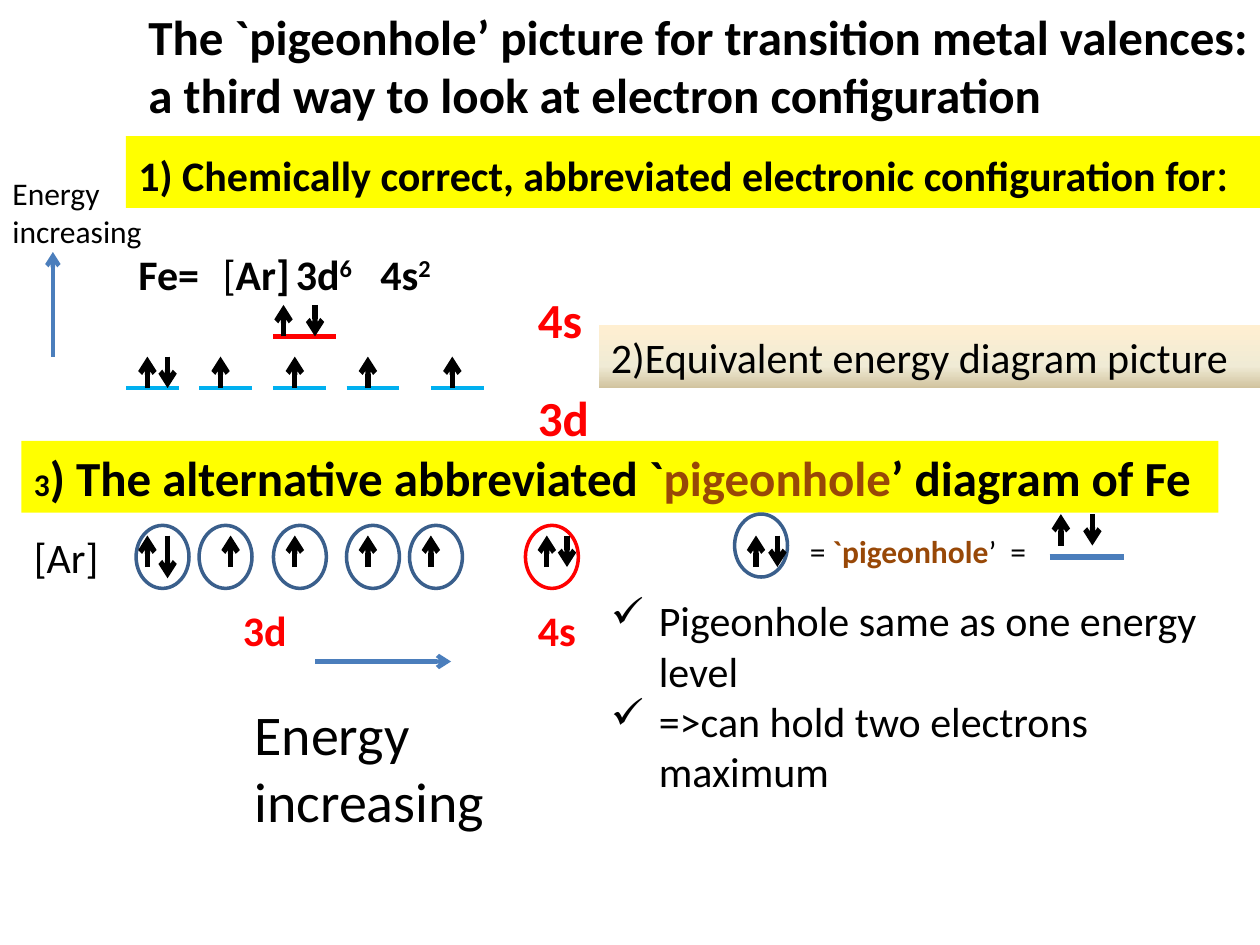
from dataclasses import dataclass

from copy import deepcopy
from lxml.etree import SubElement
from pptx import Presentation
from pptx.dml.color import RGBColor
from pptx.enum.shapes import MSO_CONNECTOR, MSO_SHAPE
from pptx.enum.text import MSO_ANCHOR, MSO_AUTO_SIZE, PP_ALIGN
from pptx.oxml.ns import qn
from pptx.util import Inches, Pt


@dataclass(frozen=True)
class Theme:
    font: str = "Calibri"
    black: str = "000000"
    red: str = "FF0000"
    brown: str = "984807"
    yellow: str = "FFFF00"
    cyan: str = "00B0F0"
    blue: str = "4B7EBC"
    outline: str = "3A5F8C"
    sand: tuple = ((0, "FFEFD1"), (0.65, "F0EBD5"), (1, "D1C39F"))
    small: int = 18
    body: int = 24
    heading: int = 28
    large: int = 32


@dataclass(frozen=True)
class Box:
    left: float
    top: float
    width: float
    height: float

    def inner(self, left, top, width, height):
        return Box(self.left + left, self.top + top, width, height)

    def lengths(self):
        return [Inches(n) for n in (self.left, self.top, self.width, self.height)]


THEME = Theme()


def add_span(para, text, size=THEME.body, color=THEME.black, bold=False, baseline=None):
    span = para.add_run()
    span.text = text
    span.font.name = THEME.font
    span.font.size = Pt(size)
    span.font.bold = bold
    span.font.color.rgb = RGBColor.from_string(color)
    if baseline:
        span._r.get_or_add_rPr().set("baseline", str(baseline))


def prepare_frame(shape):
    frame = shape.text_frame
    frame.word_wrap = True
    frame.auto_size = MSO_AUTO_SIZE.SHAPE_TO_FIT_TEXT
    frame.vertical_anchor = MSO_ANCHOR.TOP
    frame.paragraphs[0].alignment = PP_ALIGN.LEFT
    return frame


def add_label(page, box, text, **style):
    frame = prepare_frame(page.shapes.add_textbox(*box.lengths()))
    add_span(frame.paragraphs[0], text, **style)
    return frame


def add_band(page, box):
    band = page.shapes.add_shape(MSO_SHAPE.RECTANGLE, *box.lengths())
    band.shadow.inherit = False
    band.line.fill.background()
    band.fill.solid()
    band.fill.fore_color.rgb = RGBColor.from_string(THEME.yellow)
    return band, prepare_frame(band).paragraphs[0]


def add_line(page, start, end, color, width=2.5, arrow=False):
    line = page.shapes.add_connector(
        MSO_CONNECTOR.STRAIGHT, *[Inches(n) for n in (*start, *end)])
    line.line.color.rgb = RGBColor.from_string(color)
    line.line.width = Pt(width)
    properties = line._element.spPr
    if arrow:
        SubElement(properties.find(qn("a:ln")), qn("a:tailEnd"), type="arrow")
    SubElement(properties, qn("a:effectLst"))


def add_electron(page, left, top, down=False, length=0.25):
    ends = [(left, top + length), (left, top)]
    if down:
        ends.reverse()
    add_line(page, *ends, THEME.black, 3, arrow=True)


def add_level(page, box, color, up, down=None, width=2.5, gap=0):
    bottom = box.top + box.height
    add_line(page, (box.left, bottom), (box.left + box.width, bottom), color, width)
    add_electron(page, box.left + up, bottom - gap - 0.25)
    if down:
        add_electron(page, box.left + down, bottom - gap - 0.25, down=True)


def add_pigeonhole(page, box, up, down=None, color=THEME.outline, drop=0.08, length=0.25):
    hole = page.shapes.add_shape(MSO_SHAPE.OVAL, *box.lengths())
    hole.shadow.inherit = False
    hole.fill.background()
    hole.line.color.rgb = RGBColor.from_string(color)
    hole.line.width = Pt(2)
    add_electron(page, box.left + up, box.top + drop)
    if down:
        add_electron(page, box.left + down, box.top + drop, down=True, length=length)


def add_heading(page, box):
    add_label(page, box.inner(0.08, 0, 8.92, 1.04),
              "The `pigeonhole’ picture for transition metal valences: "
              "a third way to look at electron configuration",
              size=THEME.heading, bold=True)
    band, para = add_band(page, box.inner(0, 1.08, 9, 0.57))
    add_span(para, "1) Chemically correct, abbreviated electronic configuration for", bold=True)
    add_span(para, ":", size=THEME.heading)


def add_configuration(page, box):
    add_label(page, box.inner(0, 0, 0.75, 0.5), "Fe=", bold=True)
    core = add_label(page, box.inner(0.67, 0, 0.75, 0.5), "[")
    add_span(core.paragraphs[0], "Ar]", bold=True)
    for left, width, orbital, count in ((1.25, 0.75, "3d", "6"), (1.92, 1.17, "4s", "2")):
        frame = add_label(page, box.inner(left, 0, width, 0.5), orbital, bold=True)
        add_span(frame.paragraphs[0], count, bold=True, baseline=30000)


def add_energy_axis(page, box):
    add_label(page, box.inner(0, 0, 1.25, 0.71), "Energy increasing", size=THEME.small)
    add_line(page, (box.left + 0.42, box.top + 1.5), (box.left + 0.42, box.top + 0.67),
             THEME.blue, arrow=True)


def add_energy_diagram(page, box):
    add_level(page, box.inner(1.17, 0.17, 0.5, 0.25), THEME.red, up=0.08, down=0.33)
    for index, left in enumerate((0, 0.58, 1.17, 1.75, 2.42)):
        add_level(page, box.inner(left, 0.58, 0.42, 0.25), THEME.cyan,
                  up=0.17, down=None if index else 0.33)
    style = dict(size=THEME.heading, color=THEME.red, bold=True)
    names = add_label(page, box.inner(3.17, 0, 0.75, 1.35), "4s", **style)
    lower = names.add_paragraph()
    lower.space_before = Pt(22)
    add_span(lower, "3d", **style)

    band, para = add_band(page, box.inner(3.75, 0.33, 5.25, 0.5))
    add_span(para, "2)Equivalent energy diagram picture")
    band.fill.gradient()
    band.fill.gradient_angle = 270
    stops = band._element.spPr.find(".//" + qn("a:gsLst"))
    stops.append(deepcopy(stops[0]))
    for stop, (position, color) in zip(band.fill.gradient_stops, THEME.sand):
        stop.position = position
        stop.color.rgb = RGBColor.from_string(color)


def add_pigeonhole_diagram(page, box):
    band, para = add_band(page, box.inner(0, 0, 9.5, 0.57))
    add_span(para, "3", size=THEME.small, bold=True)
    for text, color in ((") The alternative abbreviated `", THEME.black),
                        ("pigeonhole", THEME.brown), ("’ diagram of Fe", THEME.black)):
        add_span(para, text, size=THEME.heading, color=color, bold=True)

    add_label(page, box.inner(0, 0.67, 0.75, 0.5), "[Ar]")
    holes = ((0.91, 0.09, 0.25), (1.41, 0.25, None), (2, 0.17, None),
             (2.58, 0.17, None), (3.08, 0.17, None))
    for left, up, down in holes:
        add_pigeonhole(page, box.inner(left, 0.67, 0.42, 0.5), up, down, length=0.34)
    add_pigeonhole(page, box.inner(4, 0.67, 0.42, 0.5), 0.17, 0.33, THEME.red)
    for left, width, orbital in ((1.66, 0.92, "3d"), (4, 0.58, "4s")):
        add_label(page, box.inner(left, 1.25, width, 0.5), orbital, color=THEME.red, bold=True)

    add_line(page, (box.left + 2.33, box.top + 1.75), (box.left + 3.41, box.top + 1.75),
             THEME.blue, arrow=True)
    add_label(page, box.inner(1.75, 2, 2.08, 1.18), "Energy increasing", size=THEME.large)


def add_key(page, box):
    add_pigeonhole(page, box.inner(0, 0, 0.42, 0.5), 0.17, 0.34, drop=0.17)
    frame = add_label(page, box.inner(0.5, 0.09, 1.83, 0.4), "= ", size=THEME.small)
    para = frame.paragraphs[0]
    add_span(para, "`pigeonhole", size=THEME.small, color=THEME.brown, bold=True)
    add_span(para, "’", size=THEME.small)
    add_label(page, box.inner(2.09, 0.09, 0.33, 0.4), "=", size=THEME.small)
    add_level(page, box.inner(2.5, 0, 0.59, 0.34), THEME.blue,
              up=0.09, down=0.34, width=3, gap=0.09)


def add_notes_list(page, box, items):
    frame = prepare_frame(page.shapes.add_textbox(*box.lengths()))
    for index, item in enumerate(items):
        para = frame.add_paragraph() if index else frame.paragraphs[0]
        add_span(para, item)
        properties = para._p.get_or_add_pPr()
        properties.set("marL", str(Inches(0.38)))
        properties.set("indent", str(Inches(-0.38)))
        SubElement(properties, qn("a:buChar"), char="✓")


def main():
    deck = Presentation()
    deck.slide_width, deck.slide_height = Inches(10), Inches(7.5)
    page = deck.slides.add_slide(deck.slide_layouts[6])
    add_heading(page, Box(1, 0, 9, 1.65))
    add_configuration(page, Box(1, 1.92, 3.09, 0.5))
    add_energy_axis(page, Box(0, 1.33, 1.25, 1.5))
    add_energy_diagram(page, Box(1, 2.25, 9, 1.35))
    add_pigeonhole_diagram(page, Box(0.17, 3.5, 9.5, 3.18))
    add_key(page, Box(5.83, 4.08, 3.09, 0.5))
    add_notes_list(page, Box(4.75, 4.67, 5.25, 1.72),
                   ("Pigeonhole same as one energy level", "=>can hold two electrons maximum"))
    deck.save("out.pptx")


if __name__ == "__main__":
    main()
